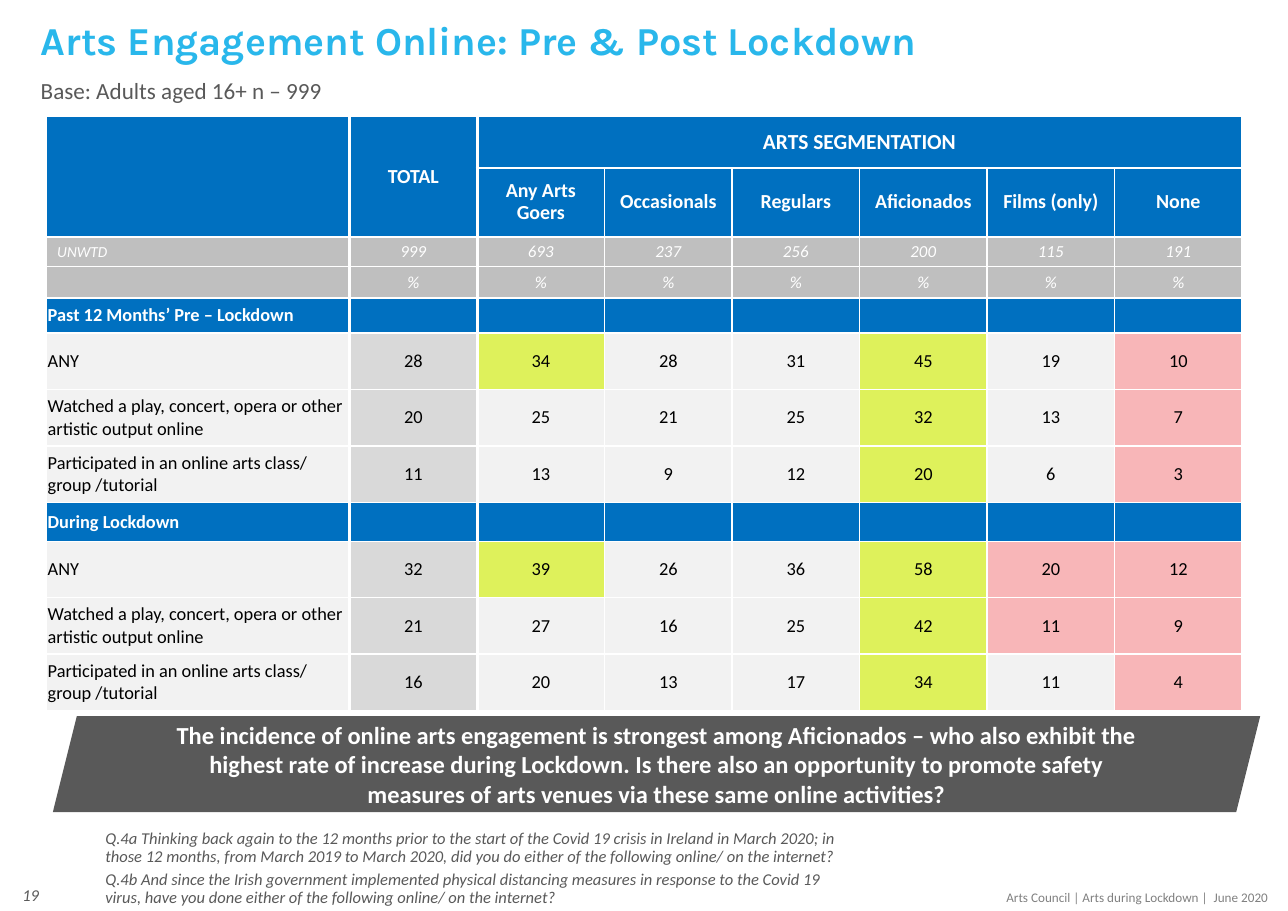
from lxml import etree
from pptx import Presentation
from pptx.dml.color import RGBColor
from pptx.enum import shapes, text
from pptx.oxml import ns
from pptx.util import Cm, Pt

BLUE = RGBColor(0x00, 0x70, 0xC0)
SKY = RGBColor(0x29, 0xB7, 0xEB)
WHITE = RGBColor(0xFF, 0xFF, 0xFF)
BLACK = RGBColor(0, 0, 0)
DARK = RGBColor(0x59, 0x59, 0x59)
MID = RGBColor(0x80, 0x80, 0x80)
GREY = RGBColor(0xBF, 0xBF, 0xBF)
SILVER = RGBColor(0xD9, 0xD9, 0xD9)
PALE = RGBColor(0xF2, 0xF2, 0xF2)
LIME = RGBColor(0xDE, 0xF1, 0x5B)
PINK = RGBColor(0xF8, 0xB6, 0xB8)

LEFT, MIDDLE, RIGHT = text.PP_ALIGN.LEFT, text.PP_ALIGN.CENTER, text.PP_ALIGN.RIGHT
TOP, CENTER, BOTTOM = text.MSO_ANCHOR.TOP, text.MSO_ANCHOR.MIDDLE, text.MSO_ANCHOR.BOTTOM

TITLE = "Arts Engagement Online: Pre & Post Lockdown"
BANNER = (
    "The incidence of online arts engagement is strongest among Aficionados – who also "
    "exhibit the highest rate of increase during Lockdown. Is there also an opportunity to "
    "promote safety measures of arts venues via these same online activities?"
)
NOTE_A = (
    "Q.4a Thinking back again to the 12 months prior to the start of the Covid 19 crisis in "
    "Ireland in March 2020; in those 12 months, from March 2019 to March 2020, did you do "
    "either of the following online/ on the internet?"
)
NOTE_B = (
    "Q.4b And since the Irish government implemented physical distancing measures in response "
    "to the Covid 19 virus, have you done either of the following online/ on the internet?"
)
BOXES = [
    ("Base: Adults aged 16+ n – 999", (0.69, 1.7, 16.64, 0.99), 15.1, DARK, False, LEFT, TOP, 0.9),
    (NOTE_A, (2.18, 19.23, 17.45, 0.86), 10.8, DARK, True, LEFT, BOTTOM, 0.9),
    (NOTE_B, (2.18, 20.17, 17.45, 0.86), 10.8, DARK, True, LEFT, BOTTOM, 0.9),
    ("19", (-0.15, 20.07, 1.3, 1.12), 10.8, DARK, True, RIGHT, CENTER, 1),
    ("Arts Council | Arts during Lockdown |  June 2020", (19.58, 20.37, 9.93, 0.64),
     8.6, MID, False, RIGHT, TOP, 1),
]

WATCH = "Watched a play, concert, opera or other artistic output online"
CLASS = "Participated in an online arts class/ group /tutorial"
ROWS = [
    ("head", 1.18, ["", "TOTAL", "ARTS SEGMENTATION"]),
    ("head", 1.59, ["", "", "Any Arts Goers", "Occasionals", "Regulars", "Aficionados",
                    "Films (only)", "None"]),
    ("base", 0.69, ["UNWTD", "999", "693", "237", "256", "200", "115", "191"]),
    ("base", 0.72, [""] + ["%"] * 7),
    ("part", 0.81, ["Past 12 Months’ Pre – Lockdown"]),
    ("data", 1.3, ["ANY", "28", "34+", "28", "31", "45+", "19", "10-"]),
    ("data", 1.3, [WATCH, "20", "25", "21", "25", "32+", "13", "7-"]),
    ("data", 1.3, [CLASS, "11", "13", "9", "12", "20+", "6", "3-"]),
    ("part", 0.9, ["During Lockdown"]),
    ("data", 1.3, ["ANY", "32", "39+", "26", "36", "58+", "20-", "12-"]),
    ("data", 1.3, [WATCH, "21", "27", "16", "25", "42+", "11-", "9-"]),
    ("data", 1.3, [CLASS, "16", "20", "13", "17", "34+", "11", "4-"]),
]
COLS = [6.99] + [2.94] * 7
LOOKS = {
    "head": (BLUE, WHITE, 13, True, False),
    "base": (GREY, WHITE, 11, False, True),
    "part": (BLUE, WHITE, 12, True, False),
    "data": (PALE, BLACK, 12, False, False),
}
MARKS = {"+": LIME, "-": PINK}


def place(item, area):
    item.left, item.top, item.width, item.height = map(Cm, area)


def style(frame, size, color, bold=False, italic=False, align=LEFT, lead=1, face="Calibri"):
    para = frame.paragraphs[0]
    para.alignment = align
    para.line_spacing = lead
    for run in para.runs:
        font = run.font
        font.name, font.size, font.bold, font.italic = face, Pt(size), bold, italic
        font.color.rgb = color


def edge(cell, col):
    props = cell._tc.get_or_add_tcPr()
    wide = {"L": col in (1, 2), "R": col in (0, 1, 7)}
    for side in "LRTB":
        width = Pt(2.25 if wide.get(side) else 1)
        line = etree.SubElement(props, ns.qn("a:ln" + side), w=str(width))
        fill = etree.SubElement(line, ns.qn("a:solidFill"))
        etree.SubElement(fill, ns.qn("a:srgbClr"), val=str(WHITE))


def fill_cell(cell, kind, col, words):
    back, color, size, bold, italic = LOOKS[kind]
    if kind == "data":
        back = SILVER if col == 1 else MARKS.get(words[-1], PALE)
        words = words.rstrip("+-")
    if words == "ARTS SEGMENTATION":
        size = 14
    roomy = kind == "head" or words == "UNWTD"
    if words == "UNWTD":
        size = 10
    cell.margin_left = cell.margin_right = Cm(0.25 if roomy else 0.03)
    cell.margin_top = cell.margin_bottom = Cm(0.03)
    cell.vertical_anchor = CENTER
    edge(cell, col)
    cell.fill.solid()
    cell.fill.fore_color.rgb = back
    cell.text_frame.text = words
    style(cell.text_frame, size, color, bold, italic, MIDDLE if col else LEFT,
          0.9 if kind == "head" else 1)
    if not words:
        cell.text_frame.paragraphs[0]._p.get_or_add_endParaRPr().set("sz", str(size * 100))


def add_grid(slide):
    area = (1.07, 2.69, sum(COLS), sum(row[1] for row in ROWS))
    grid = slide.shapes.add_table(len(ROWS), len(COLS), *map(Cm, area)).table
    grid.first_row = grid.horz_banding = False
    for col, width in enumerate(COLS):
        grid.columns[col].width = Cm(width)
    for row, (kind, height, words) in enumerate(ROWS):
        grid.rows[row].height = Cm(height)
        words = words + [""] * (len(COLS) - len(words))
        for col, word in enumerate(words):
            fill_cell(grid.cell(row, col), kind, col, word)
    for start, end in [((0, 0), (1, 0)), ((0, 1), (1, 1)), ((0, 2), (0, 7))]:
        grid.cell(*start).merge(grid.cell(*end))


def add_banner(slide):
    area = (1.22, 16.51, 27.84, 2.21)
    banner = slide.shapes.add_shape(shapes.MSO_SHAPE.PARALLELOGRAM, *map(Cm, area))
    banner.shadow.inherit = False
    banner.fill.solid()
    banner.fill.fore_color.rgb = DARK
    banner.line.fill.background()
    frame = banner.text_frame
    frame.margin_left = frame.margin_right = frame.margin_top = frame.margin_bottom = 0
    frame.vertical_anchor = CENTER
    frame.text = BANNER
    style(frame, 16, WHITE, bold=True, align=MIDDLE)


def main():
    deck = Presentation()
    deck.slide_width, deck.slide_height = Cm(29.7), Cm(21)
    slide = deck.slides.add_slide(deck.slide_layouts[5])
    title = slide.shapes.title
    place(title, (0.69, 0.36, 23.83, 1.14))
    title.text_frame.text = TITLE
    title.text_frame.auto_size = text.MSO_AUTO_SIZE.NONE
    title.text_frame.vertical_anchor = TOP
    style(title.text_frame, 25.9, SKY, bold=True, lead=0.9, face="Karla")
    for words, area, size, color, italic, align, anchor, lead in BOXES:
        frame = slide.shapes.add_textbox(*map(Cm, area)).text_frame
        frame.word_wrap = True
        frame.vertical_anchor = anchor
        frame.text = words
        style(frame, size, color, italic=italic, align=align, lead=lead)
    add_grid(slide)
    add_banner(slide)
    deck.save("out.pptx")


if __name__ == "__main__":
    main()
